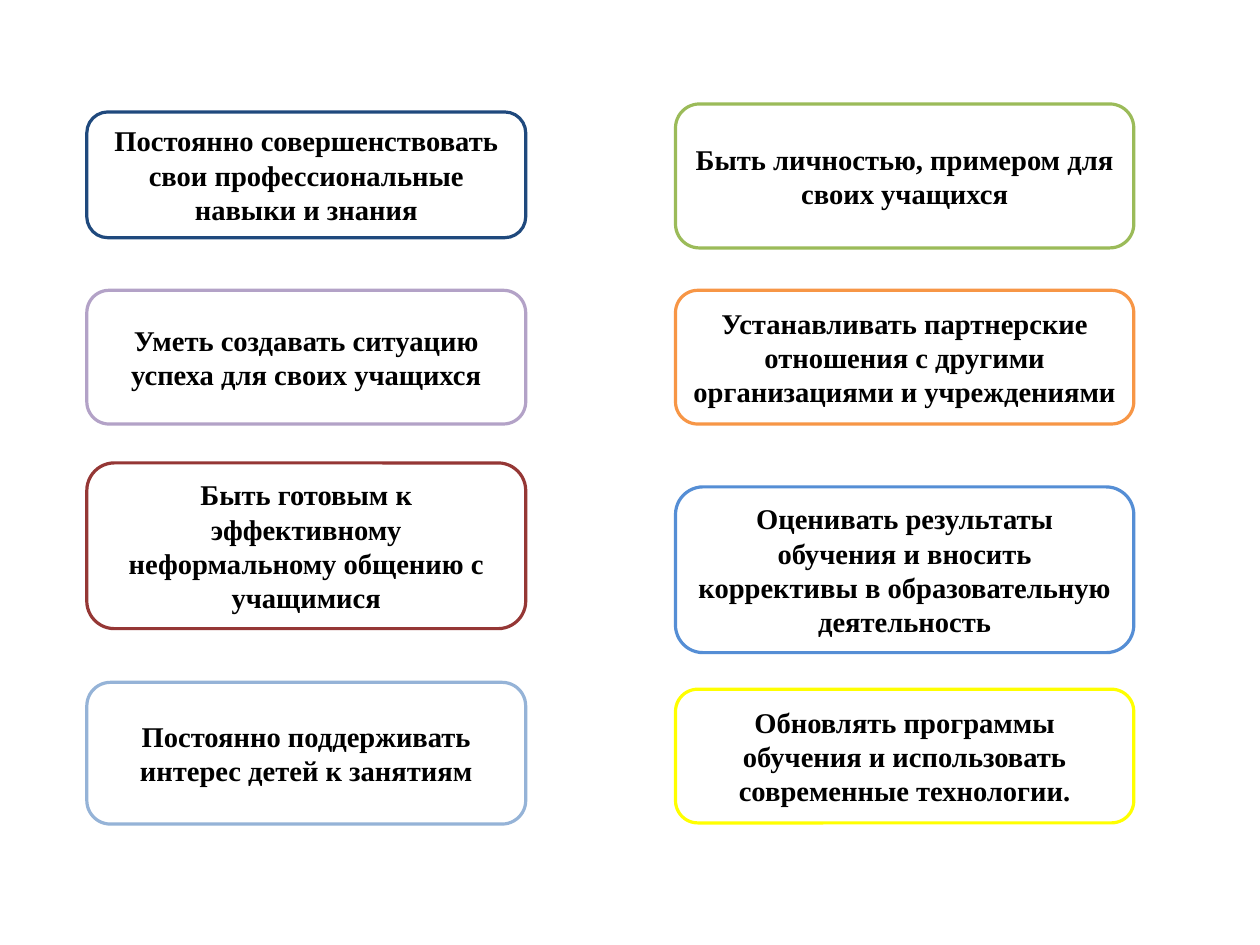
import dataclasses

import pptx
import pptx.dml.color
import pptx.enum.shapes
import pptx.enum.text
import pptx.slide
import pptx.util

Cm = pptx.util.Cm
Inches = pptx.util.Inches
Pt = pptx.util.Pt
RGBColor = pptx.dml.color.RGBColor

WHITE = RGBColor(0xFF, 0xFF, 0xFF)
BLACK = RGBColor(0x00, 0x00, 0x00)
NAVY = RGBColor(0x1F, 0x49, 0x7D)
LILAC = RGBColor(0xB3, 0xA2, 0xC7)
RED = RGBColor(0x95, 0x37, 0x35)
PALE = RGBColor(0x95, 0xB3, 0xD7)
GREEN = RGBColor(0x9B, 0xBB, 0x59)
ORANGE = RGBColor(0xF7, 0x96, 0x46)
BLUE = RGBColor(0x55, 0x8E, 0xD5)
YELLOW = RGBColor(0xFF, 0xFF, 0x00)


@dataclasses.dataclass(frozen=True)
class Card:
    top: float
    height: float
    color: RGBColor
    text: str


@dataclasses.dataclass(frozen=True)
class Column:
    left: float
    width: float
    cards: tuple[Card, ...]


COLUMNS = (
    Column(0.76, 3.84, (
        Card(0.98, 1.1, NAVY, "Постоянно совершенствовать свои профессиональные навыки и знания"),
        Card(2.54, 1.17, LILAC, "Уметь создавать ситуацию успеха для своих учащихся"),
        Card(4.05, 1.45, RED, "Быть готовым к эффективному неформальному общению с учащимися"),
        Card(5.97, 1.24, PALE, "Постоянно поддерживать интерес детей к занятиям"),
    )),
    Column(5.91, 4.01, (
        Card(0.91, 1.26, GREEN, "Быть личностью, примером для своих учащихся"),
        Card(2.54, 1.17, ORANGE,
             "Устанавливать партнерские отношения с другими организациями и учреждениями"),
        Card(4.26, 1.45, BLUE,
             "Оценивать результаты обучения и вносить коррективы в образовательную деятельность"),
        Card(6.03, 1.17, YELLOW,
             "Обновлять программы обучения и использовать современные технологии."),
    )),
)


def draw_card(slide: pptx.slide.Slide, column: Column, card: Card) -> None:
    shape = slide.shapes.add_shape(
        pptx.enum.shapes.MSO_SHAPE.ROUNDED_RECTANGLE,
        Inches(column.left), Inches(card.top), Inches(column.width), Inches(card.height))
    shape.shadow.inherit = False
    shape.fill.solid()
    shape.fill.fore_color.rgb = WHITE
    shape.line.color.rgb = card.color
    shape.line.width = Pt(2)

    frame = shape.text_frame
    frame.word_wrap = True
    frame.vertical_anchor = pptx.enum.text.MSO_ANCHOR.MIDDLE
    line = frame.paragraphs[0]
    line.text = card.text
    line.alignment = pptx.enum.text.PP_ALIGN.CENTER
    line.font.name = "Times New Roman"
    line.font.size = Pt(18)
    line.font.bold = True
    line.font.color.rgb = BLACK


def main() -> None:
    deck = pptx.Presentation()
    deck.slide_width = Cm(28)
    deck.slide_height = Cm(21)
    slide = deck.slides.add_slide(deck.slide_layouts[6])
    for column in COLUMNS:
        for card in column.cards:
            draw_card(slide, column, card)
    deck.save("out.pptx")


if __name__ == "__main__":
    main()
